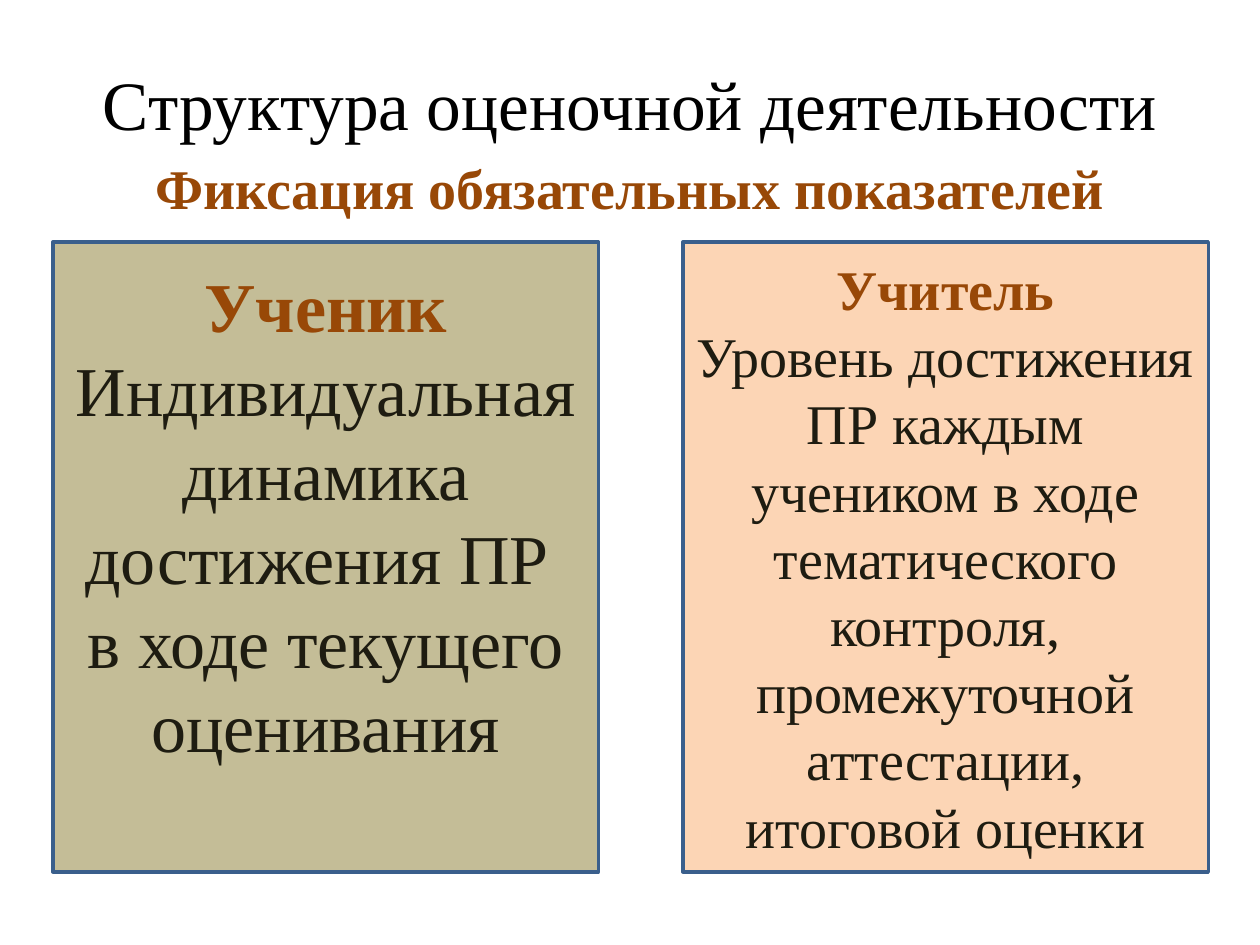
from pptx import Presentation
from pptx.dml.color import RGBColor
from pptx.enum.shapes import MSO_SHAPE as SHAPE
from pptx.enum.text import MSO_ANCHOR as ANCHOR, PP_ALIGN as ALIGN
from pptx.util import Inches, Pt

BROWN, DARK = "984807", "1E1C11"


def rgb(code):
    return RGBColor.from_string(code)


def write(frame, lines, size, anchor):
    """Fill a text frame with centred (text, colour, bold) lines."""
    frame.word_wrap = True
    frame.vertical_anchor = anchor
    for i, (text, color, bold) in enumerate(lines):
        para = frame.paragraphs[0] if i == 0 else frame.add_paragraph()
        para.alignment = ALIGN.CENTER
        para.line_spacing = Pt(size * 1.2)
        run = para.add_run()
        run.text = text
        font = run.font
        font.name = "Times New Roman"
        font.size = Pt(size)
        font.bold = bold
        font.color.rgb = rgb(color)


deck = Presentation()
deck.slide_width, deck.slide_height = Inches(10), Inches(7.5)
slide = deck.slides.add_slide(deck.slide_layouts[6])

# Title and subtitle
heads = [
    (0.3, 1.03, "Структура оценочной деятельности", "000000", False, 39.6, ANCHOR.MIDDLE),
    (1.17, 5.53, "Фиксация обязательных показателей", BROWN, True, 32, ANCHOR.TOP),
]
for top, height, text, color, bold, size, anchor in heads:
    box = slide.shapes.add_textbox(Inches(0.5), Inches(top), Inches(9), Inches(height))
    write(box.text_frame, [(text, color, bold)], size, anchor)

# Pupil and teacher panels: left, width, fill, size, bottom inset, name, body
panels = [
    (0.42, 4.33, "C4BD97", 40, 0.72, "Ученик",
     ["Индивидуальная динамика достижения ПР ", "в ходе текущего оценивания"]),
    (5.42, 4.17, "FCD5B5", 32, 0.05, "Учитель",
     ["Уровень достижения ПР каждым учеником в ходе тематического контроля, "
      "промежуточной аттестации, итоговой оценки"]),
]
for left, width, fill, size, inset, name, body in panels:
    panel = slide.shapes.add_shape(
        SHAPE.RECTANGLE, Inches(left), Inches(1.92), Inches(width), Inches(5))
    panel.shadow.inherit = False
    panel.fill.solid()
    panel.fill.fore_color.rgb = rgb(fill)
    panel.line.color.rgb = rgb("3A5F8C")
    panel.line.width = Pt(2)
    panel.text_frame.margin_bottom = Inches(inset)
    lines = [(name, BROWN, True)] + [(text, DARK, False) for text in body]
    write(panel.text_frame, lines, size, ANCHOR.MIDDLE)

deck.save("out.pptx")
